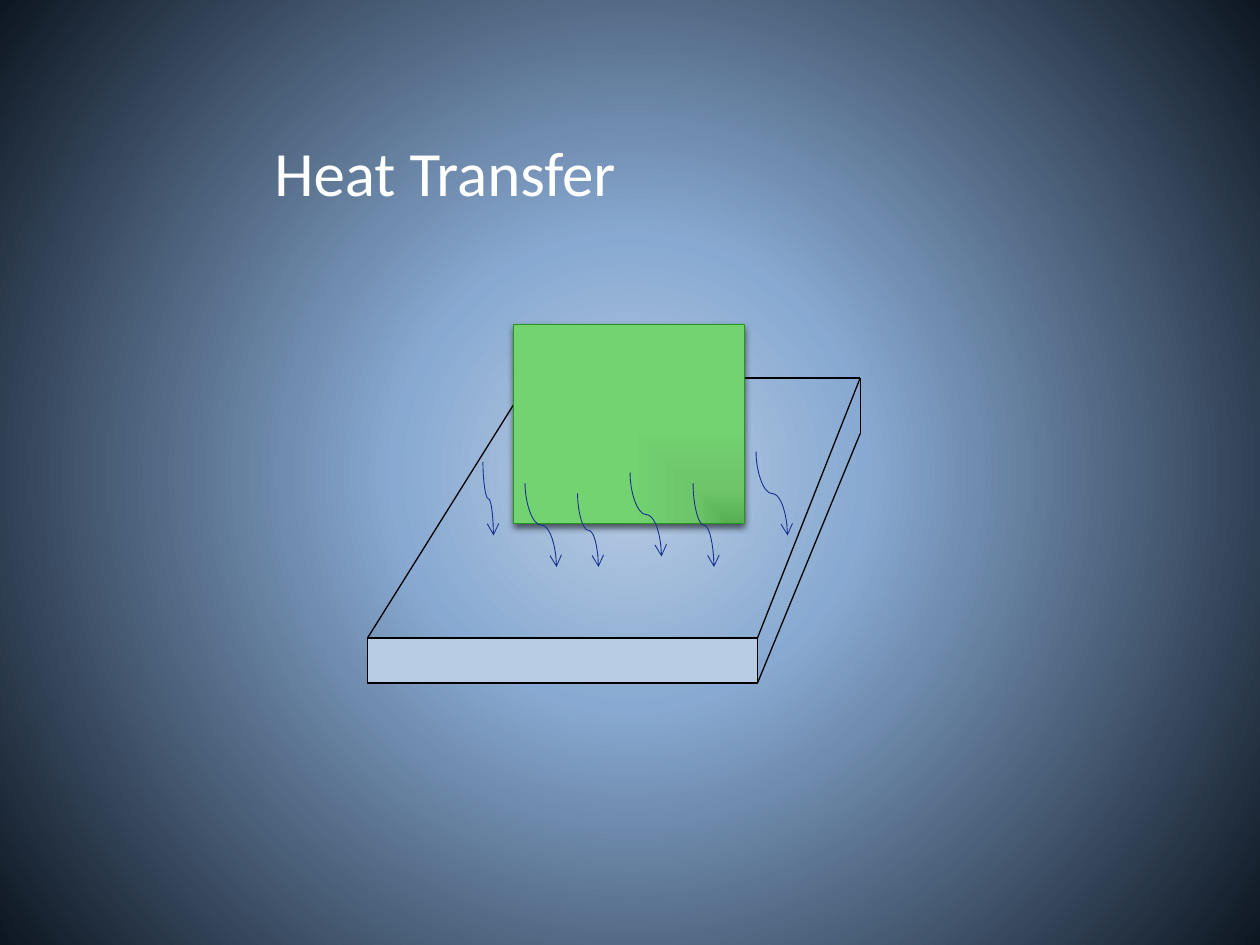
from dataclasses import dataclass

from lxml.etree import SubElement
from pptx import Presentation
from pptx.dml.color import RGBColor
from pptx.enum.shapes import MSO_CONNECTOR as Link, MSO_SHAPE as Preset
from pptx.enum.text import MSO_ANCHOR as Anchor, PP_ALIGN as Align
from pptx.oxml.ns import qn
from pptx.util import Cm, Pt


@dataclass(frozen=True)
class Theme:
    font: str = "Calibri"
    title_size: float = 36
    title: str = "FFFFFF"
    edge: str = "000000"
    edge_width: float = 0.75
    slab: str = "B8CCE4"
    block_edge: str = "25961A"
    heat: str = "173191"
    thin_width: float = 0.5
    backdrop: tuple = ((0, "BACDE4"), (30, "88A9D1"), (100, "0D1621"))
    block: tuple = ((0, "56B052"), (35, "6EC56A"), (100, "73D370"))


def add_node(parent, tag, **attributes):
    return SubElement(parent, qn(tag), {key: str(value) for key, value in attributes.items()})


class Canvas:
    """Draws themed elements on the current slide."""

    def __init__(self, slide, theme):
        self.slide = slide
        self.theme = theme

    def gradient(self, fill, owner, stops, path, focus):
        fill.gradient()
        grad = owner.find(".//" + qn("a:gradFill"))
        for child in list(grad):
            grad.remove(child)
        stop_list = add_node(grad, "a:gsLst")
        for position, color in stops:
            stop = add_node(stop_list, "a:gs", pos=position * 1000)
            add_node(stop, "a:srgbClr", val=color)
        route = add_node(grad, "a:path", path=path)
        add_node(route, "a:fillToRect", **{side: share * 1000 for side, share in zip("ltrb", focus)})

    def background(self, stops):
        self.gradient(self.slide.background.fill, self.slide.element, stops, "circle", (50, 50, 50, 50))

    def text(self, words, left, top, width, height, *, size, color, align=Align.LEFT, anchor=Anchor.MIDDLE):
        frame = self.slide.shapes.add_textbox(Cm(left), Cm(top), Cm(width), Cm(height)).text_frame
        frame.word_wrap = True
        frame.vertical_anchor = anchor
        paragraph = frame.paragraphs[0]
        paragraph.text = words
        paragraph.alignment = align
        paragraph.font.name = self.theme.font
        paragraph.font.size = Pt(size)
        paragraph.font.color.rgb = RGBColor.from_string(color)

    def stroke(self, line, color, width):
        line.color.rgb = RGBColor.from_string(color)
        line.width = Pt(width)

    def rectangle(self, left, top, width, height, fill, edge, edge_width):
        face = self.slide.shapes.add_shape(Preset.RECTANGLE, Cm(left), Cm(top), Cm(width), Cm(height))
        face.shadow.inherit = False
        if isinstance(fill, str):
            face.fill.solid()
            face.fill.fore_color.rgb = RGBColor.from_string(fill)
        else:
            self.gradient(face.fill, face.element, fill, "rect", (100, 100, 0, 0))
        self.stroke(face.line, edge, edge_width)
        return face

    def drop_shadow(self, face, blur, distance, opacity):
        effects = face.element.spPr.find(qn("a:effectLst"))
        shadow = add_node(effects, "a:outerShdw", blurRad=Pt(blur), dist=Pt(distance),
                          dir=90 * 60000, rotWithShape=0)
        add_node(add_node(shadow, "a:srgbClr", val=self.theme.edge), "a:alpha", val=opacity * 1000)

    def connector(self, kind, start, end, color, width):
        link = self.slide.shapes.add_connector(kind, *map(Cm, start + end))
        self.stroke(link.line, color, width)
        add_node(link.element.spPr, "a:effectLst")
        return link

    def edge(self, start, end):
        self.connector(Link.STRAIGHT, start, end, self.theme.edge, self.theme.edge_width)

    def heat_arrow(self, x, y, across, down):
        center_x, center_y = x + across / 2, y + down / 2
        start = (center_x + down / 2, center_y - across / 2)
        end = (center_x - down / 2, center_y + across / 2)
        arrow = self.connector(Link.CURVE, start, end, self.theme.heat, self.theme.thin_width)
        properties = arrow.element.spPr
        properties.find(qn("a:xfrm")).set("rot", str(270 * 60000))
        add_node(properties.find(qn("a:ln")), "a:tailEnd", type="arrow")


def main():
    theme = Theme()
    deck = Presentation()
    deck.slide_width, deck.slide_height = Cm(25.4), Cm(19.05)
    canvas = Canvas(deck.slides.add_slide(deck.slide_layouts[6]), theme)
    canvas.background(theme.backdrop)
    canvas.text("Heat Transfer", 5.28, 2.34, 14.76, 2.24, size=theme.title_size, color=theme.title)

    back_left, back_right, back_low = (10.69, 7.62), (17.34, 7.62), (17.34, 8.74)
    front_left, front_right, front_low = (7.41, 12.86), (15.27, 12.86), (15.27, 13.77)
    canvas.edge(back_right, back_low)
    canvas.edge(back_right, back_left)
    canvas.rectangle(*front_left, front_right[0] - front_left[0], front_low[1] - front_right[1],
                     theme.slab, theme.edge, theme.edge_width)
    for front, back in ((front_left, back_left), (front_right, back_right), (front_low, back_low)):
        canvas.edge(front, back)

    block = canvas.rectangle(10.36, 6.55, 4.65, 4.01, theme.block, theme.block_edge, theme.thin_width)
    canvas.drop_shadow(block, blur=4, distance=2, opacity=60)

    grid_step = 2.54 / 12
    heat_flows = ((50, 46, 3, 8), (60, 45, 3, 8), (46, 44, 1, 7),
                  (72, 43, 3, 8), (66, 46, 2, 8), (55, 47, 2, 7))
    for flow in heat_flows:
        canvas.heat_arrow(*(steps * grid_step for steps in flow))

    deck.save("out.pptx")


if __name__ == "__main__":
    main()
